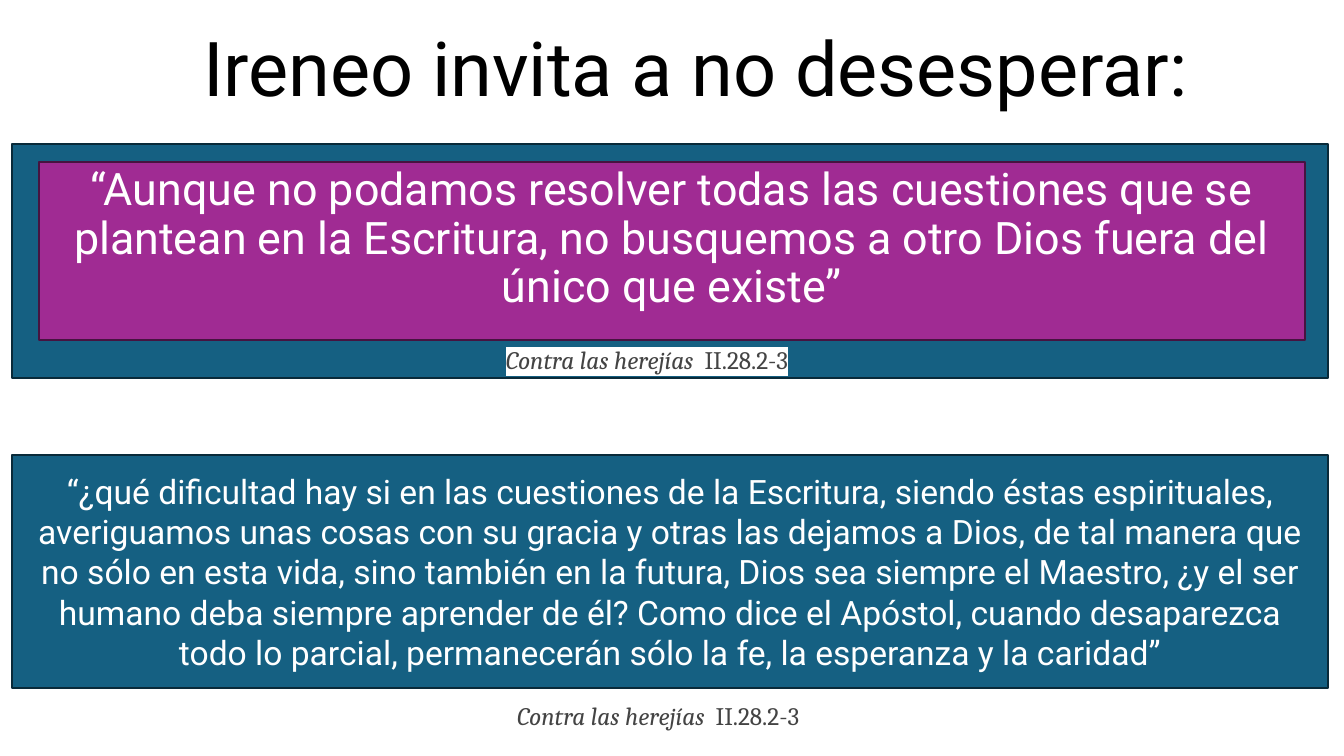
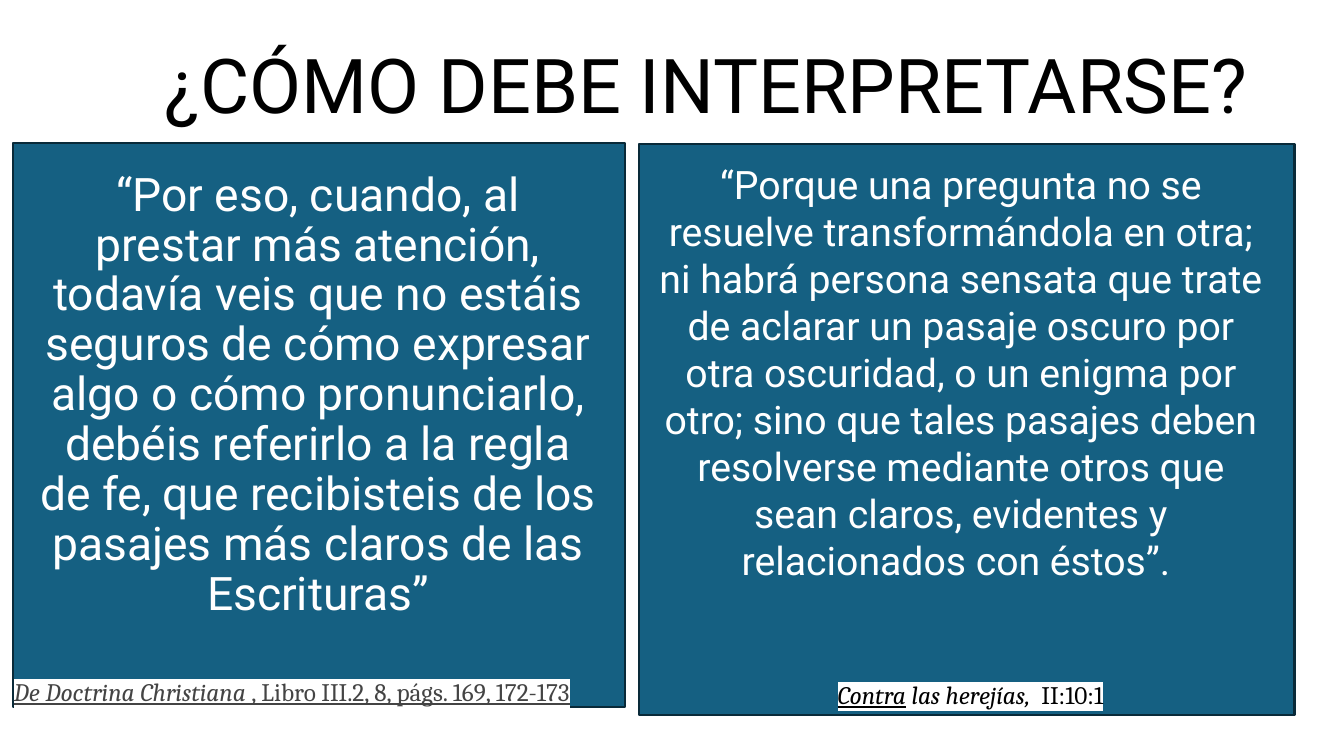
from lxml.etree import SubElement
from pptx import Presentation
from pptx.dml.color import RGBColor as Rgb
from pptx.enum.shapes import MSO_SHAPE as Kind
from pptx.enum.text import MSO_ANCHOR as Anchor, PP_ALIGN as Align
from pptx.oxml.ns import qn
from pptx.util import Inches as In, Pt

BLACK = Rgb(0x00, 0x00, 0x00)
WHITE = Rgb(0xFF, 0xFF, 0xFF)
GREY = Rgb(0x44, 0x44, 0x44)
BLUE = Rgb(0x15, 0x60, 0x82)
NAVY = Rgb(0x09, 0x2A, 0x39)
PURPLE = Rgb(0xA0, 0x2B, 0x93)
PLUM = Rgb(0x46, 0x13, 0x40)


class Deck:
    """Holds the shared style and the current slide."""

    sans = "Roboto"
    serif = "Cambria"

    def __init__(self):
        self.file = Presentation()
        self.file.slide_width = In(13.33)
        self.file.slide_height = In(7.5)

    def page(self):
        self.slide = self.file.slides.add_slide(self.file.slide_layouts[6])

    def panel(self, box, fill=BLUE, edge=NAVY):
        shape = self.slide.shapes.add_shape(Kind.RECTANGLE, *map(In, box))
        shape.shadow.inherit = False
        shape.fill.solid()
        shape.fill.fore_color.rgb = fill
        shape.line.color.rgb = edge
        shape.line.width = Pt(1.5)
        return shape

    def label(self, box):
        return self.slide.shapes.add_textbox(*map(In, box))

    def start(self, shape, align=Align.CENTER, anchor=Anchor.TOP, tight=False, before=0):
        frame = shape.text_frame
        frame.word_wrap = True
        frame.vertical_anchor = anchor
        para = frame.paragraphs[0]
        para.alignment = align
        para.line_spacing = 0.9 if tight else 1.0
        para.space_before = Pt(before)
        return para

    def run(self, para, text, size, color, face=sans):
        run = para.add_run()
        run.text = text
        font = run.font
        font.name, font.size, font.color.rgb = face, Pt(size), color
        return run

    def title(self, box, text):
        para = self.start(self.label(box), anchor=Anchor.BOTTOM, tight=True)
        self.run(para, text, 54, BLACK)

    def quote(self, shape, text, size, **style):
        self.run(self.start(shape, **style), text, size, WHITE)

    def cite(self, box, parts, color=GREY, align=Align.LEFT):
        para = self.start(self.label(box), align=align)
        for text, slant, under in parts:
            run = self.run(para, text, 18, color, self.serif)
            run.font.italic = slant
            run.font.underline = under
            props = run.font.fill._xPr
            mark = SubElement(props, qn("a:highlight"))
            SubElement(mark, qn("a:srgbClr"), val=str(WHITE))
            props.find(qn("a:solidFill")).addnext(mark)


def first(deck):
    deck.page()
    wide = 0.12, 13.05, 2.32
    left, width, height = wide
    source = [("Contra las herejías", True, False), ("  II.28.2-3", False, False)]
    deck.panel((left, 1.43, width, height))
    deck.title((1.15, 0.19, 11.5, 0.98), "Ireneo invita a no desesperar:")
    deck.quote(
        deck.panel((0.39, 1.61, 12.55, 1.76), PURPLE, PLUM),
        "“Aunque no podamos resolver todas las cuestiones que se plantean en la "
        "Escritura, no busquemos a otro Dios fuera del único que existe”",
        32, tight=True, before=10)
    deck.quote(
        deck.panel((left, 4.51, width, height)),
        "“¿qué dificultad hay si en las cuestiones de la Escritura, siendo éstas "
        "espirituales, averiguamos unas cosas con su gracia y otras las dejamos a Dios, "
        "de tal manera que no sólo en esta vida, sino también en la futura, Dios sea "
        "siempre el Maestro, ¿y el ser humano deba siempre aprender de él? Como dice el "
        "Apóstol, cuando desaparezca todo lo parcial, permanecerán sólo la fe, la "
        "esperanza y la caridad”",
        24, anchor=Anchor.MIDDLE)
    for x, y in ((4.92, 3.37), (5.03, 6.9)):
        deck.cite((x, y, 6.67, 0.4), source)


def second(deck):
    deck.page()
    deck.title((1.35, 0.35, 11.5, 0.99), "¿CÓMO DEBE INTERPRETARSE? ")
    deck.panel((0.13, 1.42, 6.07, 5.59))
    deck.quote(
        deck.label((0.28, 1.65, 5.75, 5.13)),
        "“Por eso, cuando, al prestar más atención, todavía veis que no estáis seguros "
        "de cómo expresar algo o cómo pronunciarlo, debéis referirlo a la regla de fe, "
        "que recibisteis de los pasajes más claros de las Escrituras”",
        33, tight=True, before=10)
    deck.panel((6.34, 1.43, 6.5, 5.66))
    deck.quote(
        deck.label((6.41, 1.54, 6.24, 4.34)),
        "“Porque una pregunta no se resuelve transformándola en otra; ni habrá persona "
        "sensata que trate de aclarar un pasaje oscuro por otra oscuridad, o un enigma "
        "por otro; sino que tales pasajes deben resolverse mediante otros que sean "
        "claros, evidentes y relacionados con éstos”. ",
        28)
    deck.cite(
        (6.29, 6.69, 6.67, 0.4),
        [("Contra", True, True), (" las herejías,", True, False), ("  II:10:1", False, False)],
        BLACK, Align.CENTER)
    deck.cite(
        (0.04, 6.66, 6.5, 0.4),
        [("De Doctrina Christiana", True, True),
         (" , Libro III.2, 8, págs. 169, 172-173", False, True)])


def main():
    deck = Deck()
    first(deck)
    second(deck)
    deck.file.save("out.pptx")


if __name__ == "__main__":
    main()
